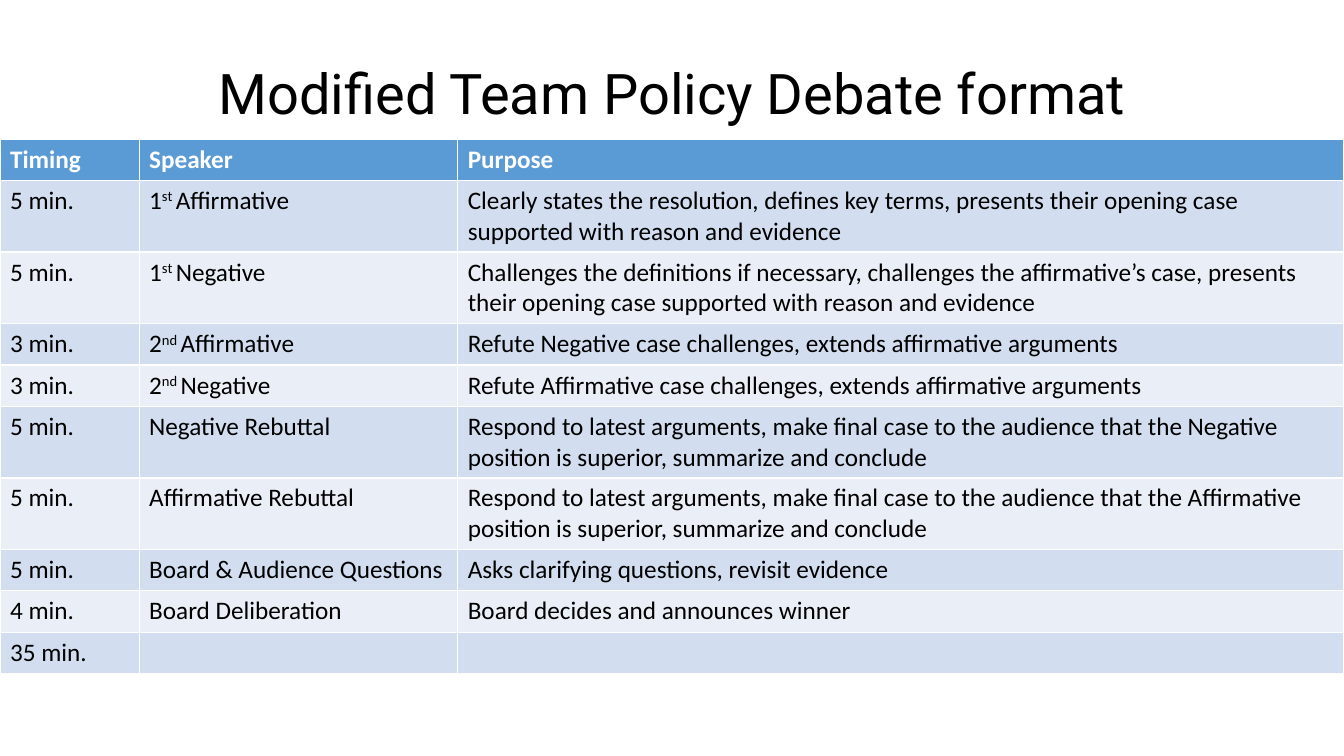
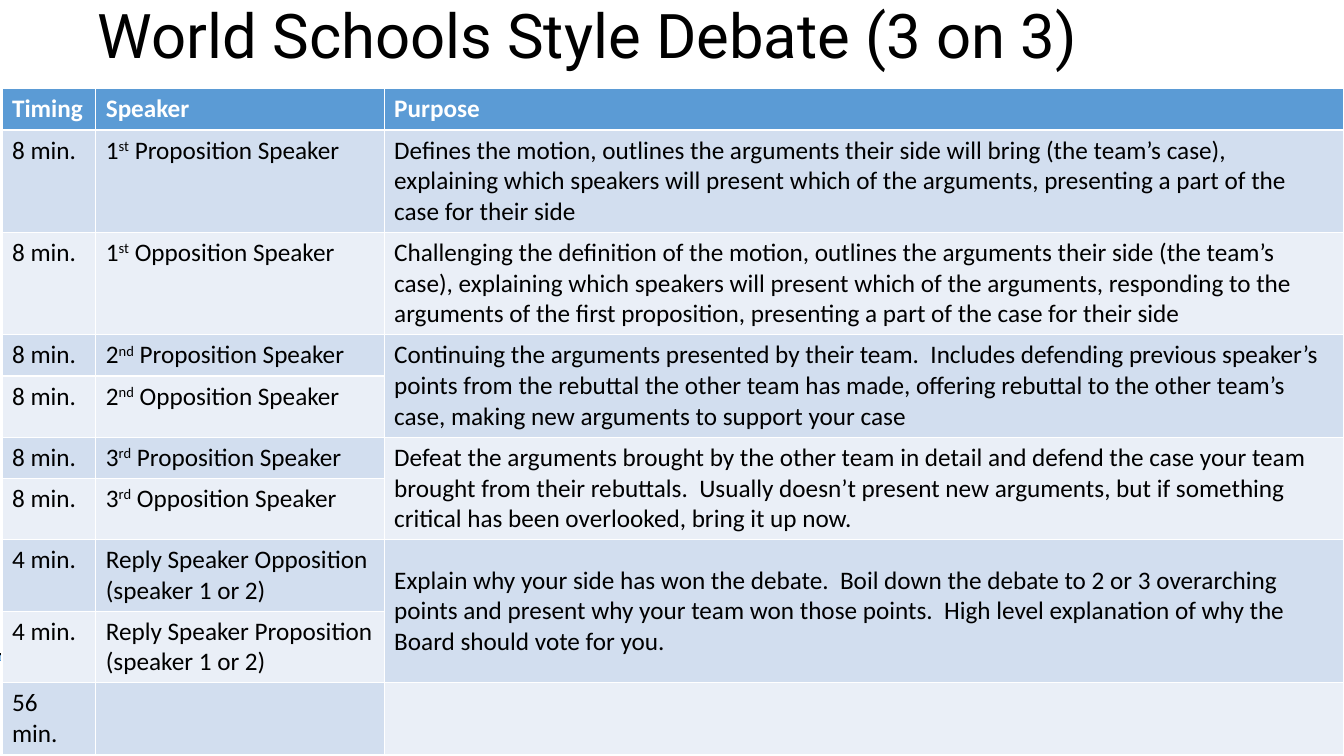
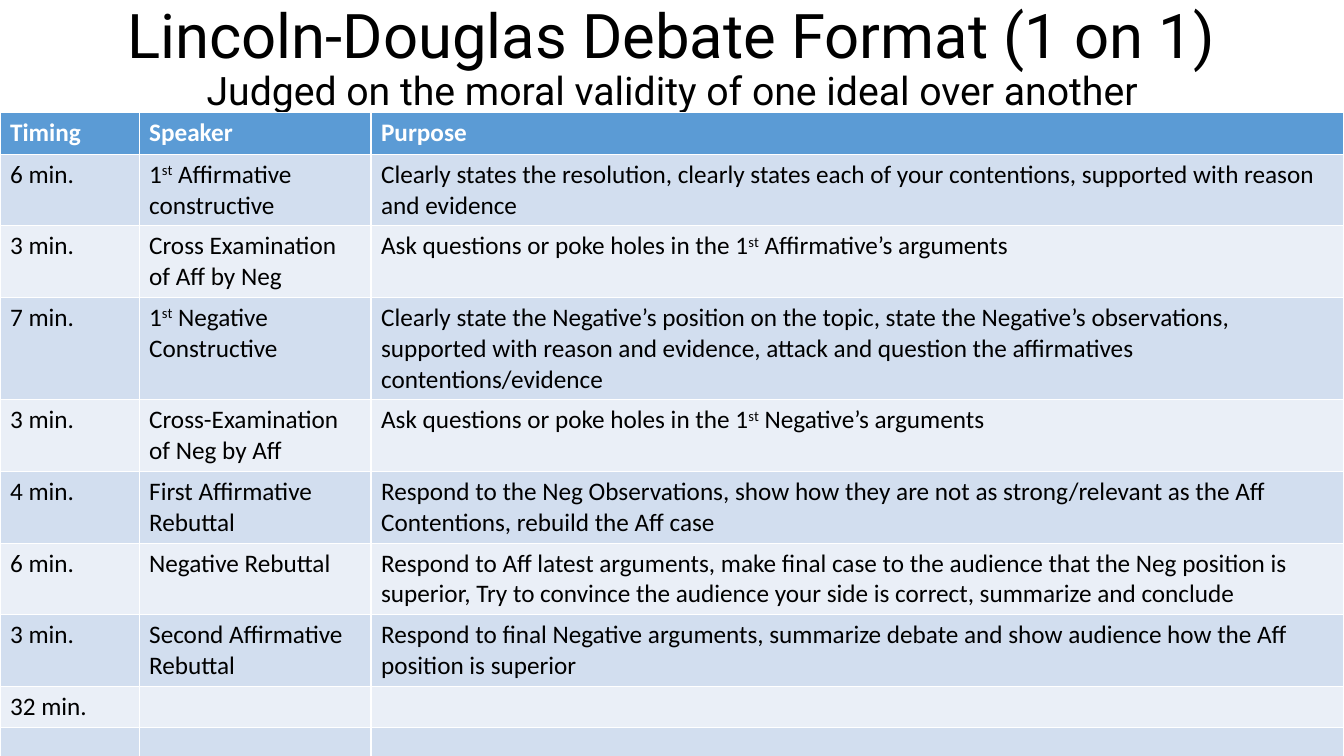
from pptx import Presentation
from pptx.dml.color import RGBColor
from pptx.enum import shapes, text
from pptx.oxml.ns import qn
from pptx.util import Inches, Pt
from lxml import etree

COLORS = {
    "text": "000000",
    "white": "FFFFFF",
    "header": "5B9BD5",
    "rule": "9DC3E6",
    "band_dark": "D2DEEF",
    "band_light": "EAEFF7",
}
WIDTH = 13.33
ROW_HEIGHT = 0.41
CENTER = text.PP_ALIGN.CENTER
LEFT = text.PP_ALIGN.LEFT


def color(name):
    return RGBColor.from_string(COLORS[name])


def set_font(para, name, size, color_name, bold=False):
    para.font.name = name
    para.font.size = Pt(size)
    para.font.color.rgb = color(color_name)
    para.font.bold = bold


DEBATES = [
    {
        "title": [("Modified Team Policy Debate format", 40)],
        "title_box": (0, WIDTH),
        "title_margin": 0.66,
        "align": CENTER,
        "corner": (0, 1.38),
        "columns": (1.38, 3.16),
        "rows": [
            ("5 min.", "1^st ^Affirmative", "Clearly states the resolution, defines key terms, presents their opening case supported with reason and evidence"),
            ("5 min.", "1^st ^Negative", "Challenges the definitions if necessary, challenges the affirmative’s case, presents their opening case supported with reason and evidence"),
            ("3 min.", "2^nd ^Affirmative", "Refute Negative case challenges, extends affirmative arguments"),
            ("3 min.", "2^nd ^Negative", "Refute Affirmative case challenges, extends affirmative arguments"),
            ("5 min.", "Negative Rebuttal", "Respond to latest arguments, make final case to the audience that the Negative position is superior, summarize and conclude"),
            ("5 min.", "Affirmative Rebuttal", "Respond to latest arguments, make final case to the audience that the Affirmative position is superior, summarize and conclude"),
            ("5 min.", "Board & Audience Questions", "Asks clarifying questions, revisit evidence"),
            ("4 min.", "Board Deliberation", "Board decides and announces winner"),
            ("35 min.", "", ""),
        ],
    },
    {
        "title": [("World Schools Style Debate (3 on 3)", 44)],
        "title_box": (0.87, 11.94),
        "title_margin": 0.05,
        "align": LEFT,
        "corner": (0.02, 0.88),
        "columns": (0.93, 2.86),
        "rows": [
            ("8 min.", "1^st^ Proposition Speaker", "Defines the motion, outlines the arguments their side will bring (the team’s case), explaining which speakers will present which of the arguments, presenting a part of the case for their side"),
            ("8 min.", "1^st^ Opposition Speaker", "Challenging the definition of the motion, outlines the arguments their side (the team’s case), explaining which speakers will present which of the arguments, responding to the arguments of the first proposition, presenting a part of the case for their side"),
            ("8 min.", "2^nd^ Proposition Speaker", "Continuing the arguments presented by their team.  Includes defending previous speaker’s points from the rebuttal the other team has made, offering rebuttal to the other team’s case, making new arguments to support your case"),
            ("8 min.", "2^nd^ Opposition Speaker", None),
            ("8 min.", "3^rd^ Proposition Speaker", "Defeat the arguments brought by the other team in detail and defend the case your team brought from their rebuttals.  Usually doesn’t present new arguments, but if something critical has been overlooked, bring it up now."),
            ("8 min.", "3^rd^ Opposition Speaker", None),
            ("4 min.", "Reply Speaker Opposition (speaker 1 or 2)", "Explain why your side has won the debate.  Boil down the debate to 2 or 3 overarching points and present why your team won those points.  High level explanation of why the Board should vote for you."),
            ("4 min.", "Reply Speaker Proposition (speaker 1 or 2)", None),
            ("56 min.", "", ""),
        ],
    },
    {
        "title": [
            ("Lincoln-Douglas Debate Format (1 on 1)", 44),
            ("Judged on the moral validity of one ideal over another", 28),
        ],
        "title_box": (0, WIDTH),
        "title_margin": 0.05,
        "align": CENTER,
        "corner": (0, 1.12),
        "columns": (1.38, 2.3),
        "rows": [
            ("6 min.", "1^st^ Affirmative constructive", "Clearly states the resolution, clearly states each of your contentions, supported with reason and evidence"),
            ("3 min.", "Cross Examination of Aff by Neg", "Ask questions or poke holes in the 1^st^ Affirmative’s arguments"),
            ("7 min.", "1^st^ Negative Constructive", "Clearly state the Negative’s position on the topic, state the Negative’s observations, supported with reason and evidence, attack and question the affirmatives contentions/evidence"),
            ("3 min.", "Cross-Examination of Neg by Aff", "Ask questions or poke holes in the 1^st^ Negative’s arguments"),
            ("4 min.", "First Affirmative Rebuttal", "Respond to the Neg Observations, show how they are not as strong/relevant as the Aff Contentions, rebuild the Aff case"),
            ("6 min.", "Negative Rebuttal", "Respond to Aff latest arguments, make final case to the audience that the Neg position is superior, Try to convince the audience your side is correct, summarize and conclude"),
            ("3 min.", "Second Affirmative Rebuttal", "Respond to final Negative arguments, summarize debate and show audience how the Aff position is superior"),
            ("32 min.", "", ""),
            ("", "", ""),
        ],
    },
]

deck = Presentation()
deck.slide_width, deck.slide_height = Inches(WIDTH), Inches(7.5)
layout = deck.slide_layouts[5]

for debate in DEBATES:
    page = deck.slides.add_slide(layout)

    if debate is DEBATES[0]:
        band = page.shapes.add_shape(shapes.MSO_SHAPE.RECTANGLE, 0, Inches(6.5), Inches(WIDTH), Inches(0.05))
        band.shadow.inherit = False
        band.fill.solid()
        band.fill.fore_color.rgb = color("rule")
        band.line.color.rgb = color("header")
        band.line.width = Pt(0.75)
        rule = page.shapes.add_connector(shapes.MSO_CONNECTOR.STRAIGHT, 0, Inches(6.49), Inches(WIDTH), Inches(6.49))
        rule.line.color.rgb = color("text")
        rule.line.width = Pt(1.5)
        etree.SubElement(rule._element.spPr, qn("a:effectLst"))
        for footer in (band, rule):
            layout.shapes._spTree.append(footer._element)

    title = page.shapes.title
    left, width = debate["title_box"]
    title.left, title.top = Inches(left), 0
    title.width, title.height = Inches(width), Inches(1.45)
    frame = title.text_frame
    frame.auto_size = text.MSO_AUTO_SIZE.NONE
    frame.vertical_anchor = text.MSO_ANCHOR.TOP
    frame.margin_top = Inches(debate["title_margin"])
    frame.text = "\n".join(line for line, size in debate["title"])
    for para, (line, size) in zip(frame.paragraphs, debate["title"]):
        para.alignment = debate["align"]
        para.line_spacing = 0.9
        set_font(para, "Roboto", size, "text")

    rows = [("Timing", "Speaker", "Purpose")] + debate["rows"]
    left, top = debate["corner"]
    table = page.shapes.add_table(
        len(rows), 3, Inches(left), Inches(top), Inches(WIDTH - left), Inches(ROW_HEIGHT * len(rows))
    ).table
    first, second = debate["columns"]
    for column, width in zip(table.columns, (first, second, WIDTH - left - first - second)):
        column.width = Inches(width)
    for row in table.rows:
        row.height = Inches(ROW_HEIGHT)

    for col in range(3):
        filled = 0
        for index, row in enumerate(rows):
            cell = table.cell(index, col)
            if row[col] is None:
                above = table.cell(index - 1, col)
                above.merge(cell)
                above.vertical_anchor = text.MSO_ANCHOR.MIDDLE
                continue
            fill = "header" if index == 0 else ("band_light", "band_dark")[filled % 2]
            filled += 1
            cell.fill.solid()
            cell.fill.fore_color.rgb = color(fill)
            para = cell.text_frame.paragraphs[0]
            set_font(para, "Calibri", 18, "text" if index else "white", index == 0)
            for part, words in enumerate(row[col].split("^")):
                if words:
                    span = para.add_run()
                    span.text = words
                    if part % 2:
                        span._r.get_or_add_rPr().set("baseline", "30000")

deck.save("out.pptx")
